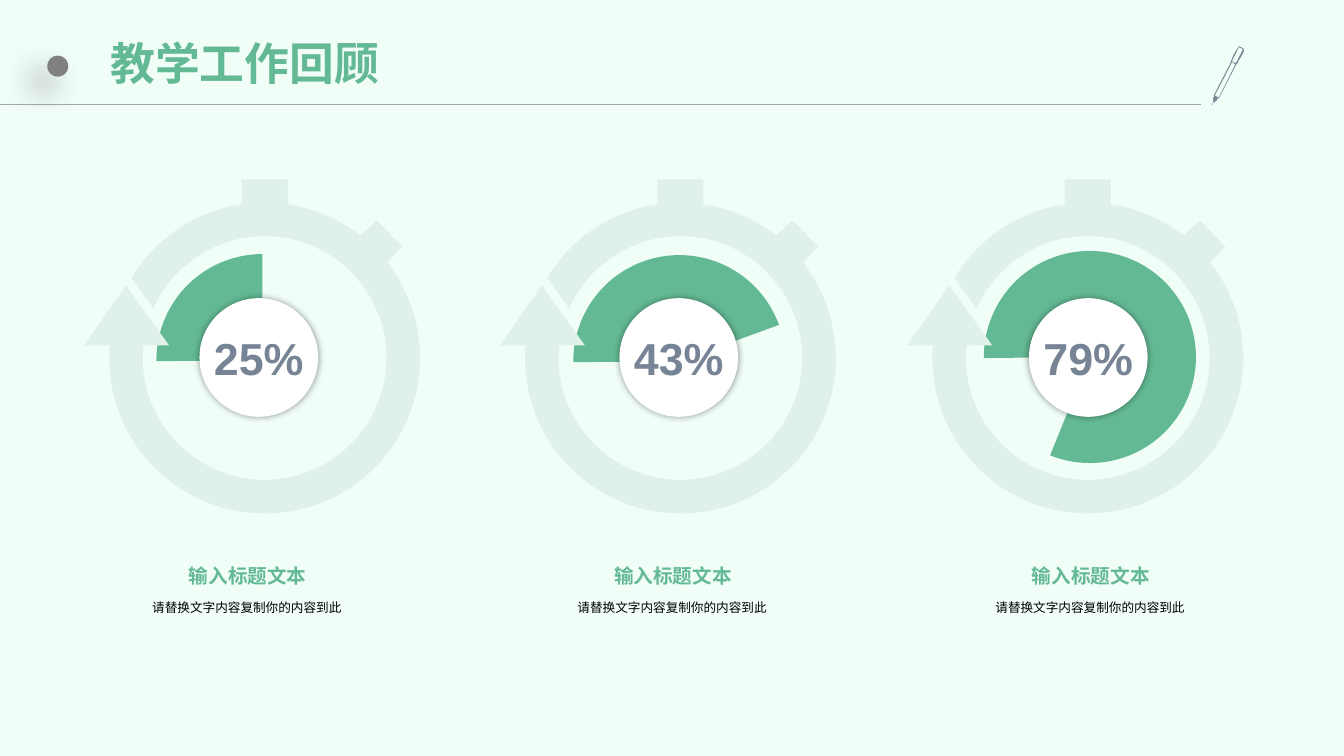
from math import cos, radians, sin, tan

from lxml.etree import SubElement
from pptx import Presentation
from pptx.dml.color import RGBColor
from pptx.enum.shapes import MSO_CONNECTOR, MSO_SHAPE
from pptx.enum.text import MSO_ANCHOR, PP_ALIGN
from pptx.oxml.ns import qn
from pptx.util import Pt

PX = 9525  # EMU per px, slide is 1280 x 720
PEN_UNIT = 9144  # EMU per step of the pen drawing

MINT = RGBColor(0xF1, 0xFE, 0xF7)
PALE = RGBColor(0xE0, 0xF1, 0xEA)
GREEN = RGBColor(0x63, 0xB9, 0x94)
SLATE = RGBColor(0x77, 0x84, 0x95)
GRAY = RGBColor(0x80, 0x80, 0x80)
RULE = RGBColor(0xA6, 0xA6, 0xA6)
WHITE = RGBColor(0xFF, 0xFF, 0xFF)
BLACK = RGBColor(0, 0, 0)
CJK = "Noto Sans CJK SC"

PEN = [
    # Outline with clip and nib
    [(32, 3), (31, 2), (27, 0), (22, 8), (19, 15), (19, 16), (2, 49), (3, 49),
     (1, 52), (2, 53), (1, 55), (2, 55), (0, 58), (0, 59), (2, 55), (3, 56),
     (4, 54), (5, 54), (6, 51), (7, 52), (24, 19), (24, 18), (25, 18), (30, 8),
     (31, 6), (26, 15), (26, 16), (32, 5)],
    # Openings: barrel, cap
    [(23, 19), (7, 51), (3, 49), (14, 28), (20, 16), (21, 16), (23, 18)],
    [(24, 17), (20, 15), (27, 1), (31, 3)],
]

# Percent, pie end angle, pie centre, and x centres of watch, hub and caption
GAUGES = [
    ("25%", 270, (250, 343), 252, 247, 235),
    ("43%", 340, (647, 344), 648, 647, 640),
    ("79%", 112, (1038, 340), 1036, 1037, 1038),
]
PIE_START = 179.44
WATCH_Y = 341


def arc(radius, *angles):
    """Curve around (0, 0) through the angles, in degrees clockwise.

    Gives the first point, then two controls and an end point per piece."""
    turns = [radians(a) for a in angles]
    nodes = [(radius * cos(turns[0]), radius * sin(turns[0]))]
    for a, b in zip(turns, turns[1:]):
        k = 4 / 3 * tan((b - a) / 4)
        nodes.append((radius * (cos(a) - k * sin(a)), radius * (sin(a) + k * cos(a)),
                      radius * (cos(b) + k * sin(b)), radius * (sin(b) - k * cos(b)),
                      radius * cos(b), radius * sin(b)))
    return nodes


def watch_outline():
    return (
        [(131, -106), (107, -131)] + arc(148, -52, -81.5)  # side button
        + [(22, -170), (-22, -170)] + arc(148, 261.5, 211)  # crown
        + arc(116, 204, 270, 360, 450, 540, 546)  # inner rim
        + [(-91, -12), (-132, -69), (-172, -12)]  # arrowhead
        + arc(148, 184.6, 180, 90, 0, -38)  # outer rim
    )


def paint(sp, color):
    sp.shadow.inherit = False
    sp.fill.solid()
    sp.fill.fore_color.rgb = color
    sp.line.fill.background()


def add_shape(shapes, kind, x, y, w, h, color, shadow=None):
    sp = shapes.add_shape(kind, x * PX, y * PX, w * PX, h * PX)
    paint(sp, color)
    if shadow:
        blur, dist, angle = shadow
        effects = sp._element.spPr.find(qn("a:effectLst"))
        outer = SubElement(effects, qn("a:outerShdw"), blurRad=str(Pt(blur)),
                           dist=str(Pt(dist)), dir=str(angle * 60000),
                           algn="ctr", rotWithShape="0")
        tone = SubElement(outer, qn("a:srgbClr"), val=str(BLACK))
        SubElement(tone, qn("a:alpha"), val="40000")
    return sp


def add_freeform(shapes, contours, x, y, color, unit=PX):
    """Nodes of two numbers end a line, nodes of six end a curve."""
    contours = [[[round(n * unit) for n in node] for node in c] for c in contours]
    builder = shapes.build_freeform(*contours[0][0])
    for i, (first, *rest) in enumerate(contours):
        if i:
            builder.move_to(*first)
        builder.add_line_segments([node[-2:] for node in rest], close=True)
    sp = builder.convert_to_shape(x * PX, y * PX)
    paint(sp, color)

    # Bend the segments that have control points
    left = min(node[-2] for c in contours for node in c)
    top = min(node[-1] for c in contours for node in c)
    path_el = next(sp._element.iter(qn("a:path")))
    steps = [el for el in path_el if el.tag != qn("a:close")]
    for step, node in zip(steps, [node for c in contours for node in c]):
        if len(node) == 6:
            step.tag = qn("a:cubicBezTo")
            step.remove(step[0])
            for px, py in zip(node[::2], node[1::2]):
                SubElement(step, qn("a:pt"), x=str(px - left), y=str(py - top))


def add_line(shapes, x1, y1, x2, y2, color, width):
    line = shapes.add_connector(MSO_CONNECTOR.STRAIGHT,
                                x1 * PX, y1 * PX, x2 * PX, y2 * PX)
    line.line.color.rgb = color
    line.line.width = Pt(width)
    SubElement(line._element.spPr, qn("a:effectLst"))


def add_box(shapes, x, y, w, h):
    return shapes.add_textbox(x * PX, y * PX, w * PX, h * PX)


def write(sp, text, size, color, font="Arial", bold=False, align=PP_ALIGN.CENTER,
          anchor=MSO_ANCHOR.MIDDLE, insets=(0, 0), spacing=None, wrap=False):
    tf = sp.text_frame
    tf.word_wrap = wrap
    tf.vertical_anchor = anchor
    tf.margin_left = tf.margin_right = insets[0] * PX
    tf.margin_top = tf.margin_bottom = insets[1] * PX
    p = tf.paragraphs[0]
    p.alignment = align
    p.line_spacing = spacing
    r = p.add_run()
    r.text = text
    r.font.size = Pt(size)
    r.font.bold = bold
    r.font.color.rgb = color
    r.font.name = font
    SubElement(r.font._element, qn("a:ea"), typeface=CJK)


def add_gauge(s, percent, pie_end, pie_center, watch_x, hub_x, caption_x):
    shapes = s.shapes.add_group_shape().shapes

    # Share of the dial
    pie_x, pie_y = pie_center
    pie = add_shape(shapes, MSO_SHAPE.PIE, pie_x - 101, pie_y - 101, 202, 202, GREEN)
    pie.adjustments[0] = PIE_START * 0.6
    pie.adjustments[1] = pie_end * 0.6

    # Stopwatch and hub
    add_freeform(shapes, [watch_outline()], watch_x, WATCH_Y, PALE)
    hub = add_shape(shapes, MSO_SHAPE.OVAL, hub_x - 57, WATCH_Y - 57, 113, 113,
                    WHITE, shadow=(5, 0, 0))
    write(hub, percent, 32, SLATE, bold=True)

    # Caption
    heading = add_box(shapes, caption_x - 71, 537, 144, 23)
    write(heading, "输入标题文本", 14, GREEN, bold=True, insets=(15, 0))
    body = add_box(shapes, caption_x - 114, 562, 228, 43)
    write(body, "请替换文字内容复制你的内容到此", 9, BLACK, anchor=MSO_ANCHOR.TOP,
          insets=(15, 6), spacing=1.2, wrap=True)


def add_header(s):
    title = add_box(s.shapes, 98, 18, 1047, 90)
    write(title, "教学工作回顾", 32, GREEN, font=CJK, bold=True, align=PP_ALIGN.LEFT,
          insets=(7, 4), spacing=0.9, wrap=True)
    add_line(s.shapes, 0, 100, 1144, 100, RULE, 0.75)
    add_shape(s.shapes, MSO_SHAPE.OVAL, 45, 53, 20, 20, GRAY, shadow=(22, 15, 135))
    add_freeform(s.shapes, PEN, 1154, 44, SLATE, unit=PEN_UNIT)


def main():
    prs = Presentation()
    prs.slide_width, prs.slide_height = 1280 * PX, 720 * PX
    s = prs.slides.add_slide(prs.slide_layouts[6])
    add_shape(s.shapes, MSO_SHAPE.RECTANGLE, 0, 0, 1280, 720, MINT)
    add_header(s)
    for gauge in GAUGES:
        add_gauge(s, *gauge)
    prs.save("out.pptx")


if __name__ == "__main__":
    main()
